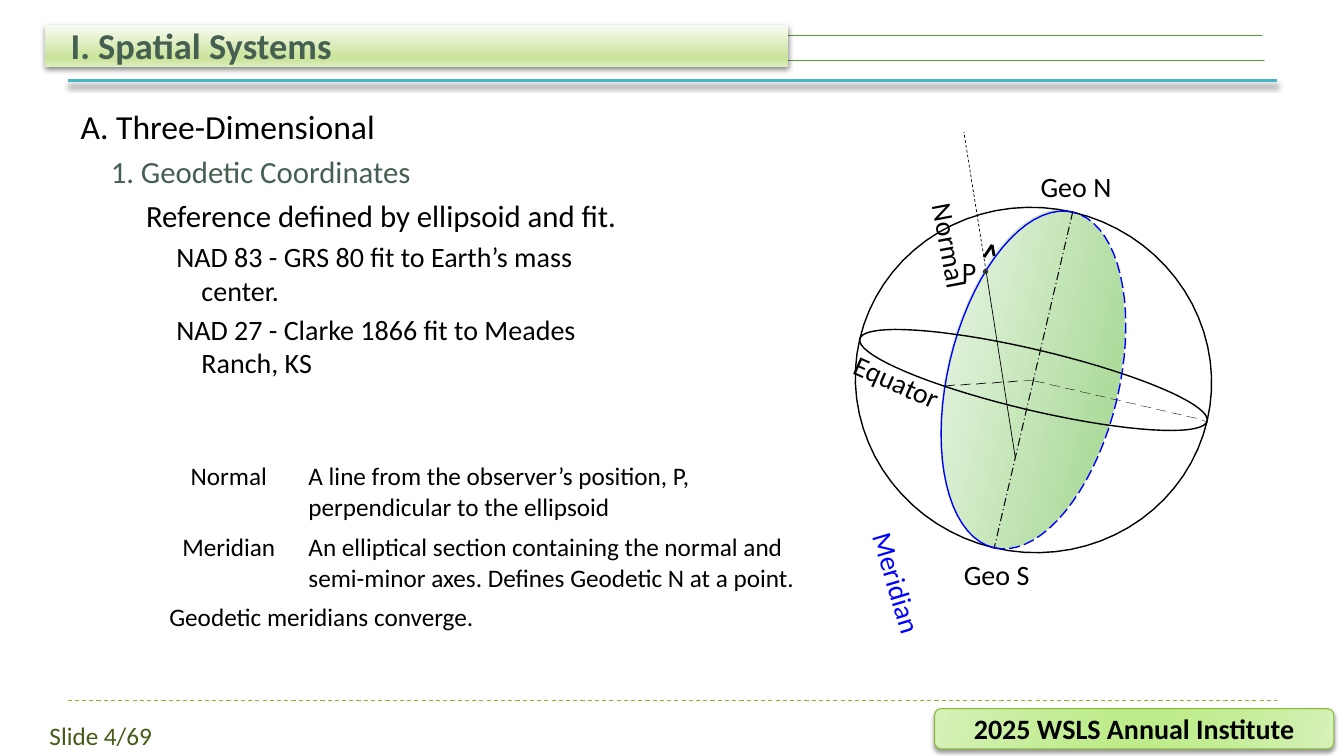
from dataclasses import dataclass
from math import cos, radians, sin

from lxml.etree import SubElement
from pptx import Presentation
from pptx.dml.color import RGBColor
from pptx.enum.dml import MSO_LINE as Dash
from pptx.enum.shapes import MSO_CONNECTOR as Link, MSO_SHAPE as Preset
from pptx.enum.text import MSO_ANCHOR as Anchor, MSO_AUTO_SIZE as Fit, PP_ALIGN as Align
from pptx.oxml.ns import qn
from pptx.util import Inches, Pt


@dataclass(frozen=True)
class Theme:
    font: str = "Calibri"
    black: str = "000000"
    white: str = "FFFFFF"
    heading: str = "455F51"
    number: str = "455C19"
    blue: str = "0000FF"
    dot: str = "333333"
    green: str = "549E39"
    lime: str = "8AB833"
    teal: str = "4AB5C4"
    title: int = 26
    topic: int = 24
    point: int = 22
    text: int = 20
    small: int = 18


THEME = Theme()
BAR_STOPS = [(0, "F9FCF4"), (74, "CCE49E"), (83, "CCE49E"), (100, "DDEDBE")]
BADGE_STOPS = [(0, "D5F1B8"), (30, "C4ED97"), (45, "BEEC8A"),
               (55, "BEEC8A"), (73, "C4ED97"), (100, "D5F1B8")]
MERIDIAN_STOPS = [(0, "F6FBF4"), (74, "AEDC9D"), (83, "AEDC9D"), (100, "C9E8BE")]

TITLE = "I. Spatial Systems"
EVENT = "2025 WSLS Annual Institute"
SLIDE_NUMBER = "Slide 4/69"
OUTLINE = [
    ("A. Three-Dimensional", THEME.topic, THEME.black, 0, 0.3, -0.3),
    ("1. Geodetic Coordinates", THEME.point, THEME.heading, 5, 0.6, -0.3),
    ("Reference defined by ellipsoid and fit.", THEME.point, THEME.black, 5, 0.9, -0.25),
    ("NAD 83 - GRS 80 fit to Earth’s mass center.", THEME.text, THEME.black, 4, 1.2, -0.25),
    ("NAD 27 - Clarke 1866 fit to Meades Ranch, KS", THEME.text, THEME.black, 4, 1.2, -0.25),
]
DEFINITIONS = [
    ("Normal", "A line from the observer’s position, P, perpendicular to the ellipsoid"),
    ("Meridian", "An elliptical section containing the normal and semi-minor axes. "
                 "Defines Geodetic N at a point."),
    ("Geodetic meridians converge.", None),
]
COLUMN_WIDTHS = (0.23, 1.38, 5.34)
ROW_HEIGHTS = (0.7, 0.7, 0.41)

CENTER = (10.25, 3.77)
TILT = 13.3
RADIUS_X, RADIUS_Y = 1.77, 1.71
MERIDIAN_X, EQUATOR_Y = 0.85, 0.3
POINT_P = (9.78, 2.69)
LABELS = [
    ("P", 9.54, 2.52, 0.15, 0, THEME.black),
    ("Meridian", 8.38, 5.62, 1.04, 73.3, THEME.blue),
    ("Normal", 9, 2.27, 0.85, 79.3, THEME.black),
    ("Geo N", 10.32, 1.68, 0.71, 0, THEME.black),
    ("Geo S", 9.56, 5.53, 0.66, 0, THEME.black),
    ("Equator", 8.45, 3.62, 0.9, 24, THEME.black),
]


def write(para, text, size=THEME.text, color=THEME.black, bold=False,
          align=Align.LEFT, before=0, left=0, hang=0):
    props = para._p.get_or_add_pPr()
    props.set("marL", str(Inches(left)))
    props.set("indent", str(Inches(hang)))
    para.alignment = align
    para.space_before = Pt(before)
    span = para.add_run()
    span.text = text
    span.font.name = THEME.font
    span.font.size = Pt(size)
    span.font.bold = bold
    span.font.color.rgb = RGBColor.from_string(color)


def set_line(shape, color, width, dash=None):
    shape.line.color.rgb = RGBColor.from_string(color)
    shape.line.width = Pt(width)
    if dash:
        shape.line.dash_style = dash


def set_shadow(shape, alpha=None, blur=0, distance=0):
    props = shape._element.spPr
    effects = SubElement(props, qn("a:effectLst"))
    if alpha:
        outer = SubElement(effects, qn("a:outerShdw"), blurRad=str(Pt(blur)),
                           dist=str(Pt(distance)), dir="5400000", rotWithShape="0")
        color = SubElement(outer, qn("a:srgbClr"), val=THEME.black)
        SubElement(color, qn("a:alpha"), val=str(alpha * 1000))


def set_gradient(shape, stops, angle):
    shape.fill.gradient()
    shape.fill.gradient_angle = -angle % 360
    stop_list = shape._element.spPr.find(qn("a:gradFill")).find(qn("a:gsLst"))
    for stop in list(stop_list):
        stop_list.remove(stop)
    for position, color in stops:
        stop = SubElement(stop_list, qn("a:gs"), pos=str(position * 1000))
        SubElement(stop, qn("a:srgbClr"), val=color)


def add_line(page, start, end, color=THEME.black, width=0.5, dash=None, shadow=()):
    line = page.shapes.add_connector(Link.STRAIGHT, *map(Inches, (*start, *end)))
    set_line(line, color, width, dash)
    set_shadow(line, *shadow)


def add_preset(page, preset, place, fill=None, stops=None, angle=0, line=None, shadow=()):
    shape = page.shapes.add_shape(preset, *map(Inches, place))
    if stops:
        set_gradient(shape, stops, angle)
    else:
        shape.fill.solid()
        shape.fill.fore_color.rgb = RGBColor.from_string(fill)
    if line:
        set_line(shape, *line)
    else:
        shape.line.fill.background()
    set_shadow(shape, *shadow)
    return shape


def tilted(x, y):
    angle = radians(TILT)
    return (CENTER[0] + x * cos(angle) - y * sin(angle),
            CENTER[1] + x * sin(angle) + y * cos(angle))


def add_arc(page, radius_x, radius_y, start, end, color=THEME.black, dash=None):
    steps = abs(end - start) // 5
    angles = [radians(start + (end - start) * step / steps) for step in range(steps + 1)]
    points = [(radius_x * cos(angle), radius_y * sin(angle)) for angle in angles]
    builder = page.shapes.build_freeform(*map(Inches, points[0]), scale=1.0)
    builder.add_line_segments([tuple(map(Inches, point)) for point in points[1:]], close=False)
    arc = builder.convert_to_shape()
    middle = [(min(values) + max(values)) / 2 for values in zip(*points)]
    x, y = tilted(*middle)
    arc.left = Inches(x) - arc.width // 2
    arc.top = Inches(y) - arc.height // 2
    arc.rotation = TILT
    arc.fill.background()
    set_line(arc, color, 1, dash)
    set_shadow(arc)


def add_box(page, left, top, width, height, inset=None, wrap=True):
    box = page.shapes.add_textbox(*map(Inches, (left, top, width, height)))
    frame = box.text_frame
    frame.word_wrap = wrap
    if inset is not None:
        frame.margin_left = frame.margin_right = Inches(inset)
        frame.margin_top = frame.margin_bottom = Inches(inset)
    return box


def add_frame(page):
    add_line(page, (0.67, 6.95), (12.67, 6.95), THEME.lime, 0.75, Dash.DASH)
    add_line(page, (0.67, 0.8), (12.67, 0.8), THEME.teal, 2, shadow=(40, 4, 3.4))
    for left in (0.73, 1.04):
        for top in (0.35, 0.6):
            add_line(page, (left, top), (left + 11.75, top), THEME.green, 0.75)
    badge = add_preset(page, Preset.ROUNDED_RECTANGLE, (9.27, 7.03, 3.96, 0.4),
                       stops=BADGE_STOPS, angle=16, line=(THEME.lime, 0.75), shadow=(40, 3, 2))
    badge.text_frame.vertical_anchor = Anchor.MIDDLE
    write(badge.text_frame.paragraphs[0], EVENT, bold=True, align=Align.CENTER)
    add_preset(page, Preset.RECTANGLE, (0.45, 0.25, 7.37, 0.41),
               stops=BAR_STOPS, angle=90, shadow=(50, 4, 2))
    add_preset(page, Preset.OVAL, (12.51, 0.05, 0.79, 0.79), fill=THEME.white)
    number = add_box(page, 0.08, 7.1, 1.84, 0.4)
    write(number.text_frame.paragraphs[0], SLIDE_NUMBER, THEME.small, THEME.number,
          align=Align.CENTER)


def add_title(page):
    title = page.shapes.title
    title.left, title.top, title.width, title.height = map(Inches, (0.6, 0.2, 12, 0.51))
    title.text_frame.vertical_anchor = Anchor.BOTTOM
    title.text_frame.auto_size = Fit.NONE
    write(title.text_frame.paragraphs[0], TITLE, THEME.title, THEME.heading, bold=True)
    page.shapes._spTree.append(title._element)


def add_outline(page):
    frame = add_box(page, 0.7, 1, 5.85, 3.2).text_frame
    for index, (text, size, color, before, left, hang) in enumerate(OUTLINE):
        para = frame.add_paragraph() if index else frame.paragraphs[0]
        write(para, text, size, color, before=before, left=left, hang=hang)


def add_globe(page):
    meridian = add_preset(page, Preset.OVAL, (9.39, 2.05, 1.7, 3.42), stops=MERIDIAN_STOPS)
    meridian.rotation = 13
    add_arc(page, RADIUS_X, RADIUS_Y, 180, 540)
    add_arc(page, MERIDIAN_X, RADIUS_Y, 90, 270, THEME.blue)
    add_line(page, (10.64, 2.1), (9.86, 5.44), width=0.75, dash=Dash.LONG_DASH_DOT)
    add_arc(page, RADIUS_X, EQUATOR_Y, 180, 540)
    for step in range(6):
        x, y = 9.37 + 0.156 * step, 3.83 - 0.01 * step
        add_line(page, (x, y), (x + 0.1, y - 0.01), width=0.5 if step < 5 else 0.25)
    add_line(page, (11.96, 4.18), (11.92, 4.17), width=0.25)
    for step in range(11):
        x, y = 11.87 - 0.151 * step, 4.15 - 0.035 * step
        add_line(page, (x, y), (x - 0.1, y - 0.02), width=0.25)
    add_line(page, POINT_P, (9.56, 1.31), dash=Dash.DASH)
    add_line(page, (10.07, 4.54), POINT_P)
    add_preset(page, Preset.OVAL, (9.76, 2.68, 0.03, 0.03), fill=THEME.dot, line=(THEME.dot, 1.5))
    for foot in ((9.76, 2.55), (9.86, 2.54)):
        add_line(page, foot, (9.84, 2.43), width=0)
    add_arc(page, MERIDIAN_X, RADIUS_Y, 90, -90, THEME.blue, Dash.LONG_DASH)
    for text, left, top, width, angle, color in LABELS:
        label = add_box(page, left, top, width, 0.34, inset=0, wrap=False)
        label.rotation = angle
        write(label.text_frame.paragraphs[0], text, color=color)


def add_definitions(page):
    place = map(Inches, (1.34, 4.53, sum(COLUMN_WIDTHS), sum(ROW_HEIGHTS)))
    table = page.shapes.add_table(len(ROW_HEIGHTS), len(COLUMN_WIDTHS), *place).table
    table.first_row = table.horz_banding = False
    for column, width in zip(table.columns, COLUMN_WIDTHS):
        column.width = Inches(width)
    for row, height in zip(table.rows, ROW_HEIGHTS):
        row.height = Inches(height)
    for cell in table.iter_cells():
        cell.fill.background()
    for index, (term, meaning) in enumerate(DEFINITIONS):
        first, second = table.cell(index, 1), table.cell(index, 2)
        write(first.text_frame.paragraphs[0], term, THEME.small,
              align=Align.CENTER if meaning else Align.LEFT)
        if meaning:
            write(second.text_frame.paragraphs[0], meaning, THEME.small)
        else:
            first.merge(second)


def main():
    deck = Presentation()
    deck.slide_width, deck.slide_height = Inches(13.33), Inches(7.5)
    page = deck.slides.add_slide(deck.slide_layouts[5])
    for add_part in (add_frame, add_title, add_outline, add_globe, add_definitions):
        add_part(page)
    deck.save("out.pptx")


if __name__ == "__main__":
    main()
